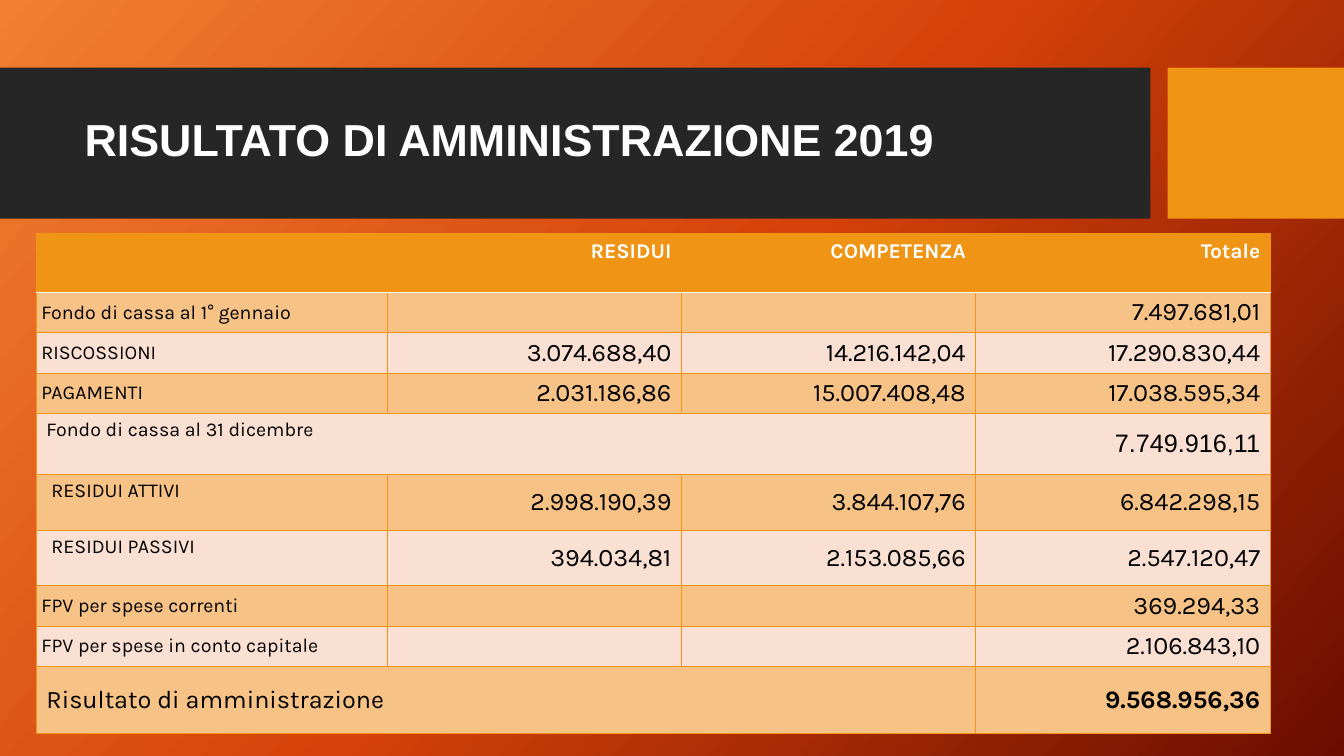
from copy import deepcopy

from lxml.etree import SubElement
from pptx import Presentation
from pptx.dml.color import RGBColor
from pptx.enum.shapes import MSO_SHAPE
from pptx.enum.text import MSO_ANCHOR, PP_ALIGN
from pptx.oxml.ns import qn
from pptx.util import Inches, Pt

WHITE = RGBColor(0xFF, 0xFF, 0xFF)
BLACK = RGBColor(0, 0, 0)
CHARCOAL = RGBColor(0x26, 0x26, 0x26)
ORANGE = RGBColor(0xF0, 0x94, 0x15)
AMBER = RGBColor(0xF7, 0xC2, 0x86)
CREAM = RGBColor(0xFA, 0xE0, 0xD2)
GRADIENT = [RGBColor(0xF1, 0x80, 0x31), RGBColor(0xD5, 0x42, 0x09), RGBColor(0x6A, 0x0D, 0x00)]


def write(frame, text, size=18, font="Karla", color=BLACK, bold=False,
          align=PP_ALIGN.LEFT, spacing=1.0):
    paragraph = frame.paragraphs[0]
    paragraph.alignment = align
    paragraph.line_spacing = spacing
    run = paragraph.add_run()
    run.text = text
    run.font.size = Pt(size)
    run.font.name = font
    run.font.bold = bold
    run.font.color.rgb = color


def outline(cell, bottom):
    """Draw the four cell borders; the bottom one has its own colour and width."""
    properties = cell._tc.get_or_add_tcPr()
    edges = [("a:lnL", ORANGE, 0.75), ("a:lnR", ORANGE, 0.75), ("a:lnT", ORANGE, 0.75),
             ("a:lnB", *bottom)]
    for position, (tag, color, width) in enumerate(edges):
        line = SubElement(properties, qn(tag), w=str(Pt(width)))
        SubElement(SubElement(line, qn("a:solidFill")), qn("a:srgbClr"), val=str(color))
        properties.insert(position, line)


deck = Presentation()
deck.slide_width, deck.slide_height = Inches(13.33), Inches(7.5)
slide = deck.slides.add_slide(deck.slide_layouts[6])

# Background gradient, light at top left
backdrop = slide.background.fill
backdrop.gradient()
backdrop.gradient_angle = 360 - 42
stop_list = next(slide.element.iter(qn("a:gsLst")))
stop_list.append(deepcopy(stop_list[0]))
for index, (stop, color) in enumerate(zip(backdrop.gradient_stops, GRADIENT)):
    stop.position = index / 2
    stop.color.rgb = color

# Title band and accent block
for left, width, color in [(0, 11.41, CHARCOAL), (11.58, 1.75, ORANGE)]:
    band = slide.shapes.add_shape(MSO_SHAPE.RECTANGLE, Inches(left), Inches(0.67),
                                  Inches(width), Inches(1.5))
    band.shadow.inherit = False
    band.fill.solid()
    band.fill.fore_color.rgb = color
    band.line.fill.background()

title = slide.shapes.add_textbox(Inches(0.74), Inches(0.82), Inches(10.51), Inches(1.18)).text_frame
title.word_wrap = True
title.vertical_anchor = MSO_ANCHOR.MIDDLE
write(title, "RISULTATO DI AMMINISTRAZIONE 2019", size=32, font="Arial", color=WHITE,
      bold=True, spacing=0.9)

# Rows: height, label indent, label anchor, texts
TOP, MIDDLE = MSO_ANCHOR.TOP, MSO_ANCHOR.MIDDLE
ROWS = [
    (0.58, 0.1, TOP, ["", "RESIDUI", "COMPETENZA", "Totale"]),
    (0.39, 0.05, MIDDLE, ["Fondo di cassa al 1° gennaio", "", "", "7.497.681,01"]),
    (0.4, 0.05, MIDDLE, ["RISCOSSIONI", "3.074.688,40", "14.216.142,04", "17.290.830,44"]),
    (0.39, 0.05, MIDDLE, ["PAGAMENTI", "2.031.186,86", "15.007.408,48", "17.038.595,34"]),
    (0.61, 0.1, TOP, ["Fondo di cassa al 31 dicembre", "", "", "7.749.916,11"]),
    (0.55, 0.15, TOP, ["RESIDUI ATTIVI", "2.998.190,39", "3.844.107,76", "6.842.298,15"]),
    (0.55, 0.15, TOP, ["RESIDUI PASSIVI", "394.034,81", "2.153.085,66", "2.547.120,47"]),
    (0.39, 0.05, MIDDLE, ["FPV per spese correnti", "", "", "369.294,33"]),
    (0.39, 0.05, MIDDLE, ["FPV per spese in conto capitale", "", "", "2.106.843,10"]),
    (0.66, 0.1, MIDDLE, ["Risultato di amministrazione", "", "", "9.568.956,36"]),
]
COLUMNS = [3.48, 2.92, 2.92, 2.92]
HEADER, CASH_END, RESULT = 0, 4, len(ROWS) - 1

accounts = slide.shapes.add_table(len(ROWS), len(COLUMNS), Inches(0.36), Inches(2.32),
                                  Inches(sum(COLUMNS)), Inches(sum(row[0] for row in ROWS))).table
accounts.horz_banding = False
for column, width in zip(accounts.columns, COLUMNS):
    column.width = Inches(width)

for r, (height, indent, label_anchor, texts) in enumerate(ROWS):
    accounts.rows[r].height = Inches(height)
    for c, text in enumerate(texts):
        cell = accounts.cell(r, c)
        cell.fill.solid()
        cell.fill.fore_color.rgb = ORANGE if r == HEADER else AMBER if r % 2 else CREAM
        outline(cell, bottom=(WHITE, 1) if r == HEADER else (ORANGE, 0.75))
        if not text:
            cell.margin_top = cell.margin_bottom = 0
        elif r == HEADER:
            write(cell.text_frame, text, size=15, color=WHITE, bold=True, align=PP_ALIGN.RIGHT)
        elif c == 0:
            cell.margin_left = Inches(indent)
            cell.vertical_anchor = label_anchor
            write(cell.text_frame, text, size=18 if r == RESULT else 14)
        else:
            cell.vertical_anchor = MIDDLE
            write(cell.text_frame, text, bold=r == RESULT, align=PP_ALIGN.RIGHT,
                  font="Arial" if r == CASH_END else "Karla")

# Labels that run across the first three columns
for r in (CASH_END, RESULT):
    accounts.cell(r, 0).merge(accounts.cell(r, 2))

deck.save("out.pptx")
